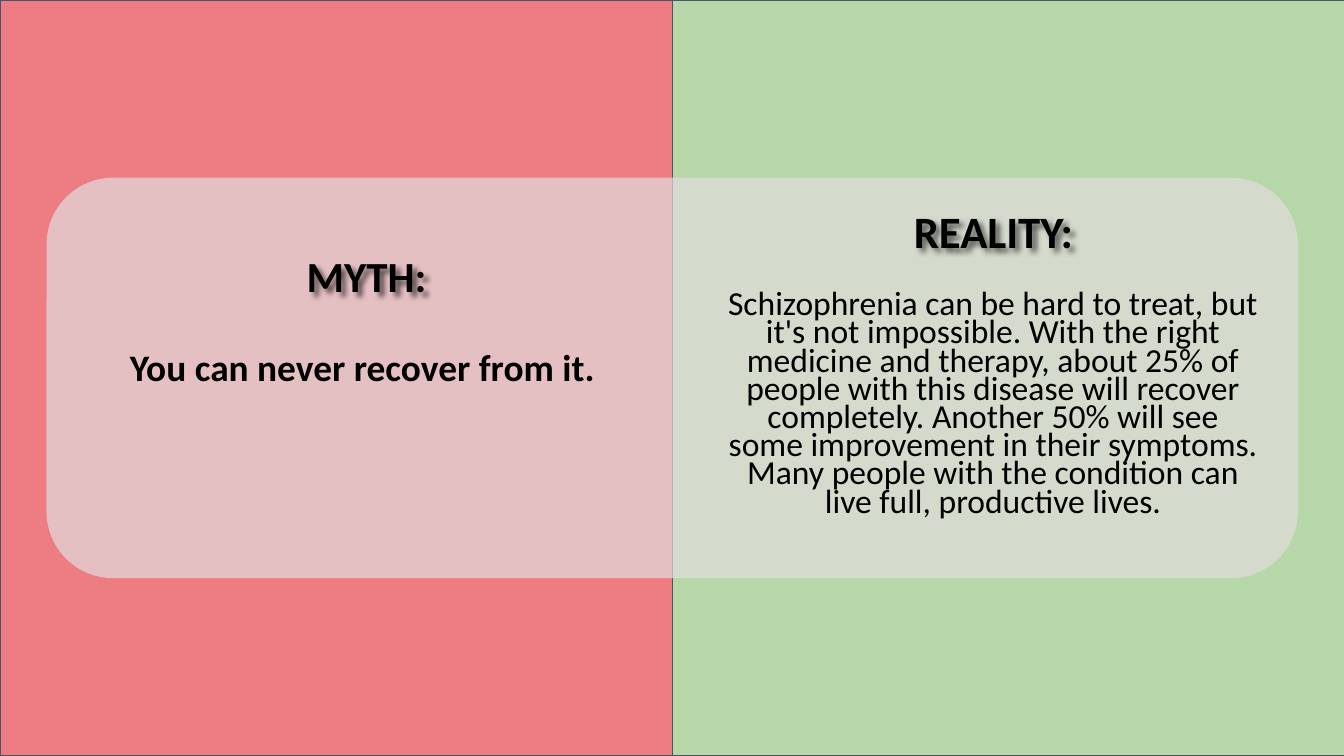
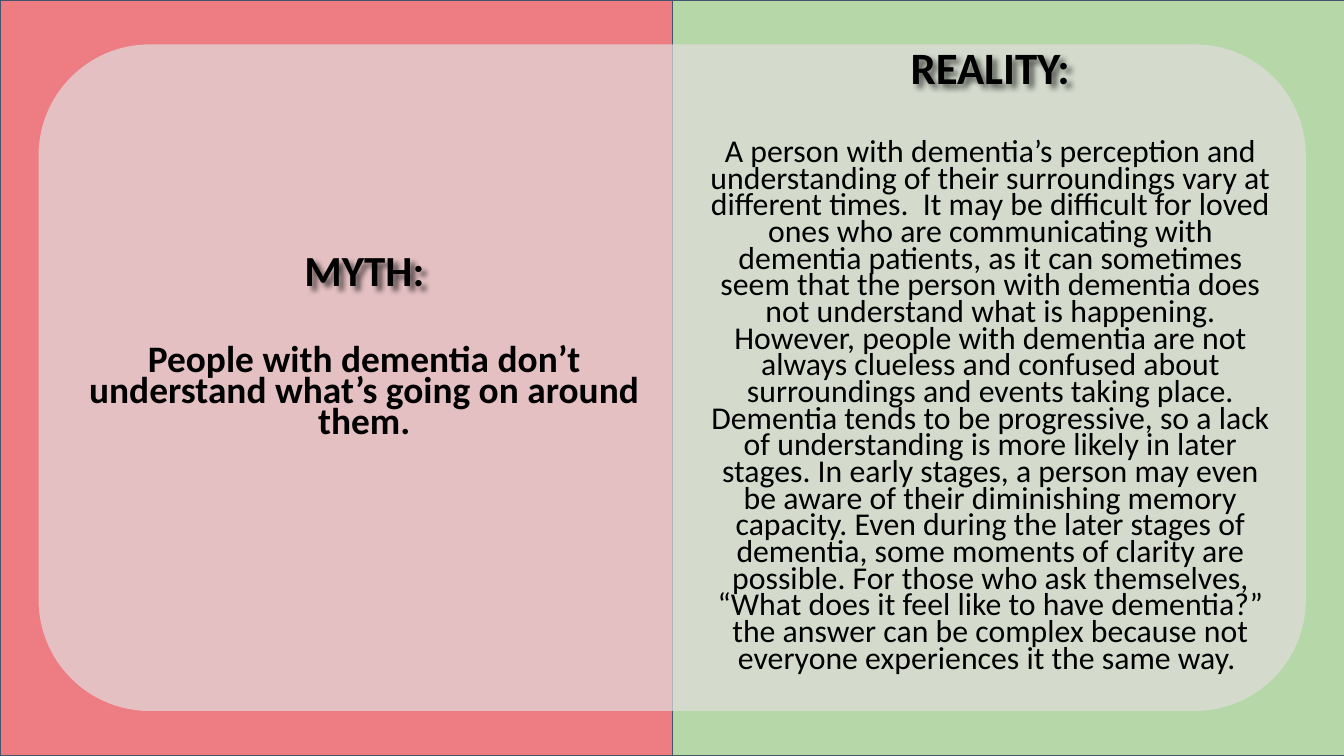
from lxml.etree import SubElement
from pptx import Presentation
from pptx.dml.color import RGBColor
from pptx.enum.shapes import MSO_SHAPE
from pptx.enum.text import MSO_ANCHOR, PP_ALIGN
from pptx.oxml.ns import qn
from pptx.util import Cm, Pt

WIDTH, HEIGHT = 25.4, 14.29
HALF = 12.71
FONT = "Calibri"
COLORS = {
    "myth": "ED7C83",
    "reality": "B6D7A8",
    "border": "44546A",
    "card": "E2DEDE",
    "text": "000000",
}
INDENT = 0.48

SLIDES = [
    {
        "card": (0.88, 3.36, 23.65, 7.57),
        "myth_head": (1.85, 4.81, 10.16, 1.3),
        "myth_box": (1.85, 6.63, 10.16, 2.13),
        "myth": "You can never recover from it. ",
        "reality_head": (13.06, 3.94, 10.95, 1.55),
        "reality_box": (13.08, 5.44, 10.9, 4.52),
        "reality": (
            "Schizophrenia can be hard to treat, but it's not impossible. "
            "With the right medicine and therapy, about 25% of people with "
            "this disease will recover completely. Another 50% will see some "
            "improvement in their symptoms. Many people with the condition "
            "can live full, productive lives."
        ),
        "size": 18,
    },
    {
        "card": (0.73, 0.84, 23.95, 12.6),
        "myth_head": (1.81, 4.7, 10.16, 1.3),
        "myth_box": (1.41, 6.46, 10.95, 1.8),
        "myth": "People with dementia don’t understand what’s going on around them.",
        "reality_head": (13, 0.84, 10.95, 1.55),
        "reality_box": (12.7, 2.57, 11.56, 4.88),
        "reality": (
            "A person with dementia’s perception and understanding of their "
            "surroundings vary at different times.  It may be difficult for "
            "loved ones who are communicating with dementia patients, as it "
            "can sometimes seem that the person with dementia does not "
            "understand what is happening. However, people with dementia are "
            "not always clueless and confused about surroundings and events "
            "taking place. Dementia tends to be progressive, so a lack of "
            "understanding is more likely in later stages. In early stages, a "
            "person may even be aware of their diminishing memory capacity. "
            "Even during the later stages of dementia, some moments of "
            "clarity are possible. For those who ask themselves, “What does "
            "it feel like to have dementia?” the answer can be complex "
            "because not everyone experiences it the same way. "
        ),
        "size": 17,
    },
]


def color(name):
    return RGBColor.from_string(COLORS[name])


def add_block(slide, kind, box, fill):
    block = slide.shapes.add_shape(kind, *map(Cm, box))
    block.shadow.inherit = False
    block.fill.solid()
    block.fill.fore_color.rgb = color(fill)
    return block


def add_half(slide, left, fill):
    half = add_block(slide, MSO_SHAPE.RECTANGLE, (left, 0, HALF, HEIGHT), fill)
    half.line.color.rgb = color("border")
    half.line.width = Pt(0.75)


def add_card(slide, box):
    """Add the rounded see-through panel that spans both halves."""
    card = add_block(slide, MSO_SHAPE.ROUNDED_RECTANGLE, box, "card")
    card.line.fill.background()
    tint = card._element.spPr.find(qn("a:solidFill"))[0]
    SubElement(tint, qn("a:alpha"), val="70000")


def add_text(slide, box, text, size, bold=False, spacing=0.7, indent=0):
    label = slide.shapes.add_textbox(*map(Cm, box))
    frame = label.text_frame
    frame.word_wrap = True
    frame.vertical_anchor = MSO_ANCHOR.TOP
    frame.margin_left = frame.margin_right = Cm(0.19)
    frame.margin_top = frame.margin_bottom = Cm(0.1)
    para = frame.paragraphs[0]
    para.text = text
    para.alignment = PP_ALIGN.CENTER
    para.line_spacing = spacing
    if indent:
        para._p.get_or_add_pPr().set("marL", str(Cm(indent)))
    font = para.font
    font.name, font.size, font.bold = FONT, Pt(size), bold
    font.color.rgb = color("text")
    return label


def add_head(slide, box, text, size, indent=0):
    """Add a bold heading whose letters cast a soft shadow."""
    head = add_text(slide, box, text, size, True, 0.8, indent)
    effects = SubElement(head._element.spPr, qn("a:effectLst"))
    shadow = SubElement(effects, qn("a:outerShdw"), blurRad="38100",
                        dist="38100", dir="2700000", algn="tl")
    tint = SubElement(shadow, qn("a:srgbClr"), val=COLORS["text"])
    SubElement(tint, qn("a:alpha"), val="60000")


def add_pair(deck, item):
    """Add one slide that sets a myth beside the reality."""
    slide = deck.slides.add_slide(deck.slide_layouts[6])
    add_half(slide, WIDTH / 2, "reality")
    add_half(slide, 0, "myth")
    add_card(slide, item["card"])
    add_text(slide, item["myth_box"], item["myth"], 20, bold=True)
    add_text(slide, item["reality_box"], item["reality"], item["size"], indent=INDENT)
    add_head(slide, item["reality_head"], "REALITY:", 24, INDENT)
    add_head(slide, item["myth_head"], "MYTH:", 23)


def main():
    deck = Presentation()
    deck.slide_width, deck.slide_height = Cm(WIDTH), Cm(HEIGHT)
    for item in SLIDES:
        add_pair(deck, item)
    deck.save("out.pptx")


if __name__ == "__main__":
    main()
